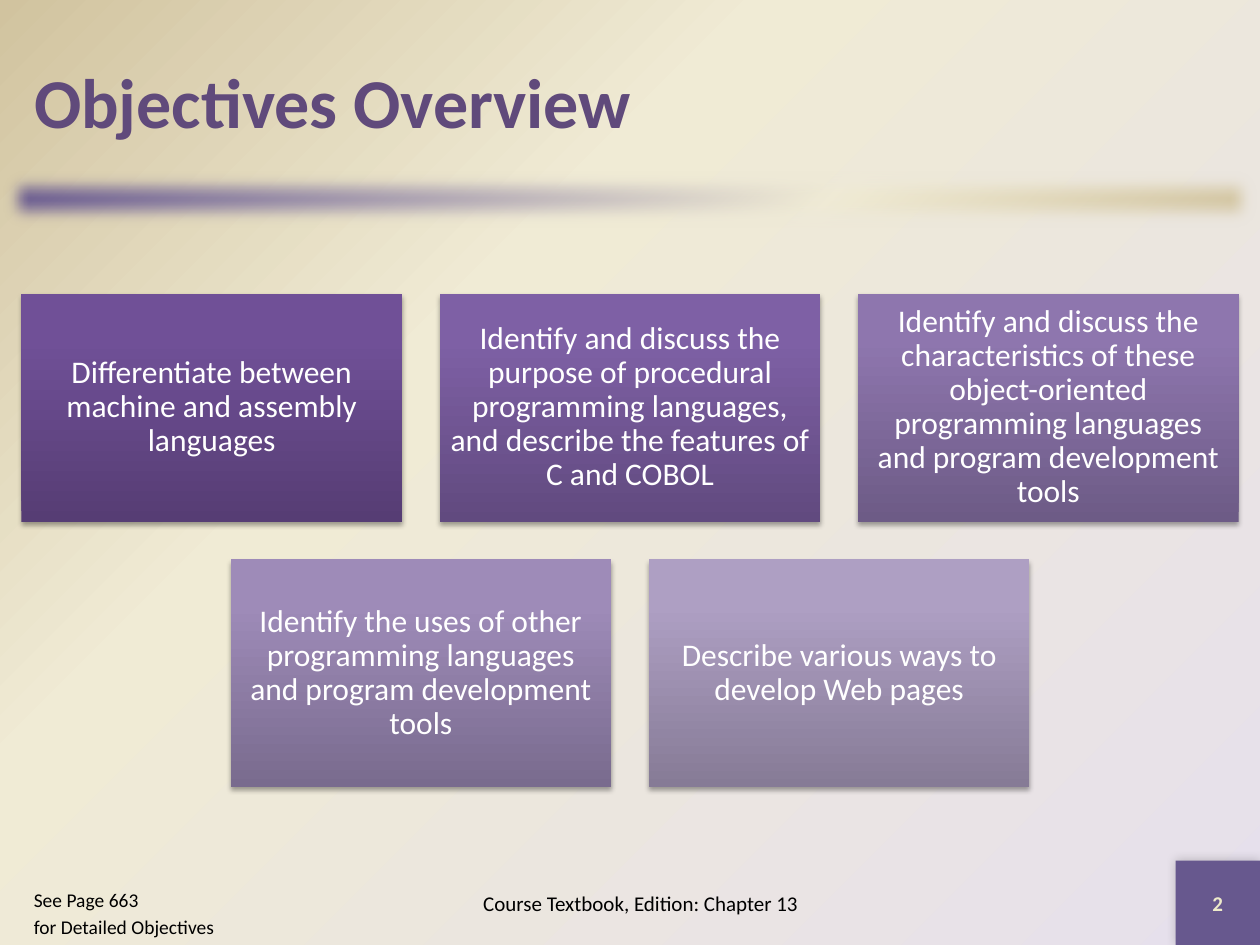
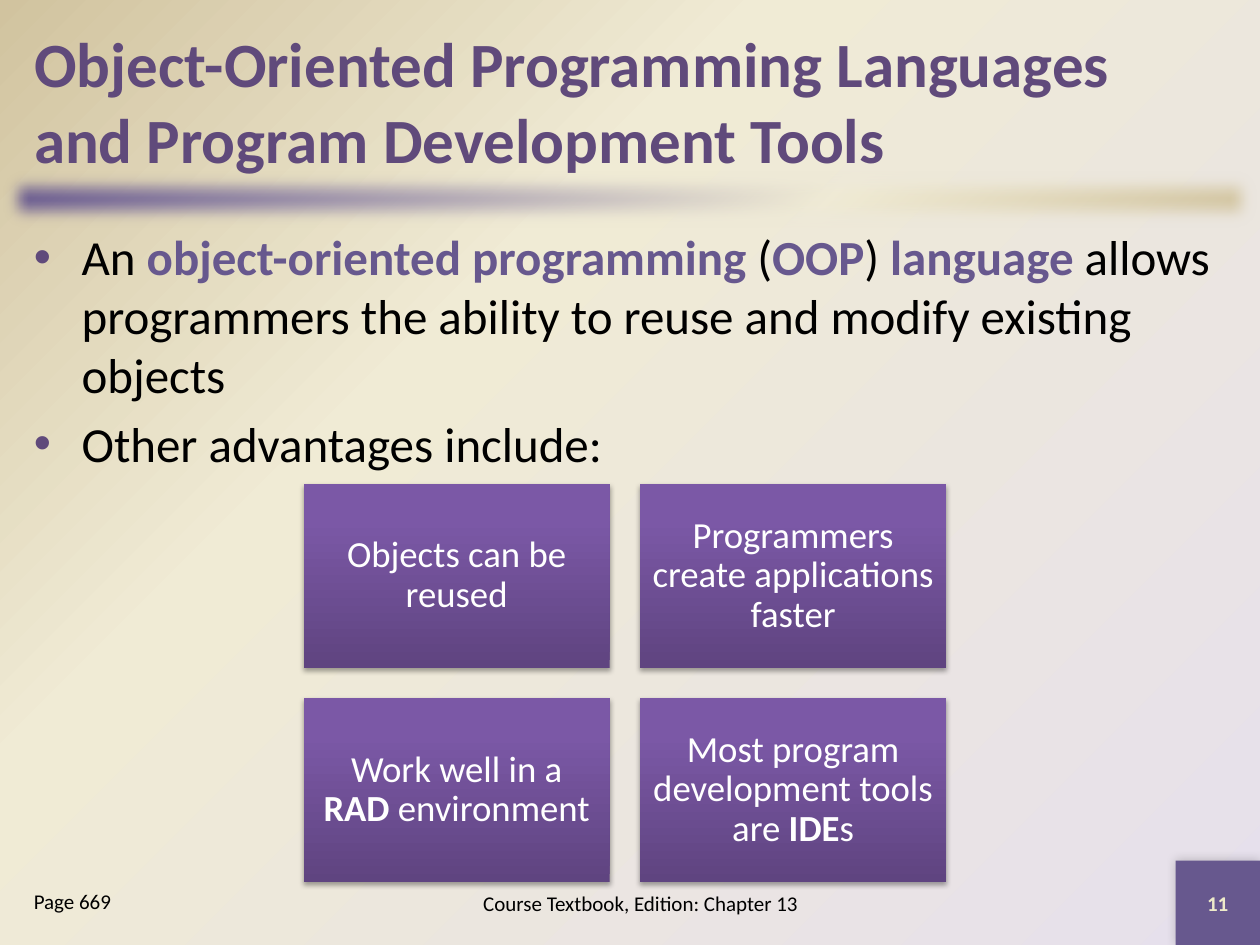
from dataclasses import dataclass

from pptx import Presentation
from pptx import util as u
from pptx.dml.color import RGBColor
from pptx.enum import shapes, text
from pptx.oxml import parse_xml
from pptx.oxml.ns import nsdecls, qn

FONT = "Calibri"
PLUM = RGBColor(0x60, 0x4A, 0x7B)
VIOLET = RGBColor(0x67, 0x58, 0x8E)
CREAM = RGBColor(0xF0, 0xEB, 0xD5)
TAN = RGBColor(0xD1, 0xC3, 0x9F)
LAVENDER = RGBColor(0xE6, 0xE0, 0xEC)
PALE_YELLOW = RGBColor(0xEE, 0xEB, 0xCA)
BLACK = RGBColor(0, 0, 0)
WHITE = RGBColor(0xFF, 0xFF, 0xFF)

LINEAR = '<a:lin ang="{}" scaled="0"/>'
FROM_BOTTOM_RIGHT = '<a:path path="circle"><a:fillToRect l="100000" t="100000"/></a:path>'
FOOTER = "Course Textbook, Edition: Chapter 13"
MARGIN = 0.17
CONTENT_WIDTH = 9.67


@dataclass(frozen=True)
class Span:
    text: str
    bold: bool = False
    color: RGBColor | None = None


@dataclass(frozen=True)
class Shade:
    """Tile gradient from the bottom edge to the top edge."""
    bottom: str
    middle: str
    top: str

    def stops(self) -> list[tuple[int, RGBColor]]:
        colors = map(RGBColor.from_string, (self.bottom, self.middle, self.top))
        return list(zip((0, 80, 100), colors))


@dataclass(frozen=True)
class Tile:
    spans: list[Span]
    shade: Shade


@dataclass(frozen=True)
class TileGrid:
    """Rows of equal tiles, each row centred on the same axis."""
    rows: list[list[Tile]]
    center: float
    top: float
    width: float
    height: float
    gap: float
    inset: float
    size: float


@dataclass(frozen=True)
class Page:
    title: list[str]
    title_size: float
    number: str
    reference: list[str]
    reference_size: float
    grid: TileGrid
    bullets: list[list[Span]]


SHADES = [
    Shade("563D74", "705097", "704F99"),
    Shade("614A7F", "7E60A5", "7F60A7"),
    Shade("6D5B86", "8E76AE", "8E75B0"),
    Shade("796B8E", "9E8BB8", "9E8BBA"),
    Shade("867B96", "AE9FC3", "AE9FC4"),
]
ADVANTAGE_SHADE = Shade("5F4480", "7B58A6", "7C57A8")

OBJECTIVES = [
    "Differentiate between machine and assembly languages",
    "Identify and discuss the purpose of procedural programming languages, "
    "and describe the features of C and COBOL",
    "Identify and discuss the characteristics of these object-oriented "
    "programming languages and program development tools",
    "Identify the uses of other programming languages and program development tools",
    "Describe various ways to develop Web pages",
]
objective_tiles = [Tile([Span(goal)], shade) for goal, shade in zip(OBJECTIVES, SHADES)]

ADVANTAGES = [
    [Span("Objects can be reused")],
    [Span("Programmers create applications faster")],
    [Span("Work well in a "), Span("RAD", True), Span(" environment")],
    [Span("Most program development tools are "), Span("IDE", True), Span("s")],
]
advantage_tiles = [Tile(spans, ADVANTAGE_SHADE) for spans in ADVANTAGES]

PAGES = [
    Page(
        ["Objectives Overview"], 40, "2",
        ["See Page 663", "for Detailed Objectives"], 11.1,
        TileGrid([objective_tiles[:3], objective_tiles[3:]],
                 5, 2.33, 3.02, 1.81, 0.3, 0.07, 18),
        [],
    ),
    Page(
        ["Object-Oriented Programming Languages ", "and Program Development Tools"], 36, "11",
        ["Page 669"], 12,
        TileGrid([advantage_tiles[:2], advantage_tiles[2:]],
                 4.96, 3.84, 2.43, 1.46, 0.24, 0.09, 21),
        [
            [
                Span("An "),
                Span("object-oriented programming ", True, VIOLET),
                Span("("),
                Span("OOP", True, VIOLET),
                Span(") "),
                Span("language ", True, VIOLET),
                Span("allows programmers the ability to reuse and modify existing objects"),
            ],
            [Span("Other advantages include:")],
        ],
    ),
]


def apply_gradient(fill, holder, stops: list[tuple[int, RGBColor]], direction: str) -> None:
    """Swap the solid fill inside holder for a gradient."""
    fill.solid()
    marks = "".join(
        f'<a:gs pos="{place * 1000}"><a:srgbClr val="{color}"/></a:gs>' for place, color in stops
    )
    gradient = parse_xml(
        f'<a:gradFill {nsdecls("a")} rotWithShape="1"><a:gsLst>{marks}</a:gsLst>'
        f"{direction}</a:gradFill>"
    )
    holder.replace(holder.find(qn("a:solidFill")), gradient)


def add_effect(shape, effect: str) -> None:
    shape.element.spPr.find(qn("a:effectLst")).append(parse_xml(effect))


def add_shadow(shape, alpha: int, blur: float, distance: float, angle: int) -> None:
    add_effect(shape, (
        f'<a:outerShdw {nsdecls("a")} blurRad="{u.Pt(blur)}" dist="{u.Pt(distance)}" '
        f'dir="{angle * 60000}" rotWithShape="0"><a:srgbClr val="000000">'
        f'<a:alpha val="{alpha * 1000}"/></a:srgbClr></a:outerShdw>'
    ))


def add_rectangle(slide, left: float, top: float, width: float, height: float):
    box = map(u.Inches, (left, top, width, height))
    rectangle = slide.shapes.add_shape(shapes.MSO_SHAPE.RECTANGLE, *box)
    rectangle.shadow.inherit = False
    rectangle.line.fill.background()
    return rectangle


def add_text_frame(slide, left: float, top: float, width: float, height: float):
    box = map(u.Inches, (left, top, width, height))
    frame = slide.shapes.add_textbox(*box).text_frame
    frame.word_wrap = True
    return frame


def add_spans(paragraph, spans: list[Span], size: float, color: RGBColor) -> None:
    for span in spans:
        run = paragraph.add_run()
        run.text = span.text
        run.font.name = FONT
        run.font.size = u.Pt(size)
        run.font.bold = span.bold
        run.font.color.rgb = span.color or color


def add_centered(frame, spans: list[Span], size: float, color: RGBColor) -> None:
    frame.vertical_anchor = text.MSO_ANCHOR.MIDDLE
    line = frame.paragraphs[0]
    line.alignment = text.PP_ALIGN.CENTER
    add_spans(line, spans, size, color)


def add_list(frame, items: list[list[Span]], size: float, bulleted: bool) -> None:
    for index, spans in enumerate(items):
        item = frame.add_paragraph() if index else frame.paragraphs[0]
        item.space_before = u.Pt(size * 0.2)
        properties = item._p.get_or_add_pPr()
        properties.set("marL", str(u.Inches(0.38)))
        properties.set("indent", str(u.Inches(-0.38)))
        if bulleted:
            for bullet in (
                f'<a:buClr {nsdecls("a")}><a:srgbClr val="{PLUM}"/></a:buClr>',
                f'<a:buFont {nsdecls("a")} typeface="Arial"/>',
                f'<a:buChar {nsdecls("a")} char="•"/>',
            ):
                properties.append(parse_xml(bullet))
        add_spans(item, spans, size, BLACK)


def format_title(slide, lines: list[str], size: float) -> None:
    title = slide.shapes.title
    title.left, title.top = u.Inches(MARGIN), u.Inches(MARGIN)
    title.width, title.height = u.Inches(CONTENT_WIDTH), u.Inches(1.25)
    frame = title.text_frame
    frame.auto_size = text.MSO_AUTO_SIZE.NONE
    frame.vertical_anchor = text.MSO_ANCHOR.MIDDLE
    heading = frame.paragraphs[0]
    heading.alignment = text.PP_ALIGN.LEFT
    for index, line in enumerate(lines):
        if index:
            heading.add_line_break()
        add_spans(heading, [Span(line, True)], size, PLUM)


def add_frame(slide, page: Page) -> None:
    """Draw the title band, footer, page number and page reference."""
    band = add_rectangle(slide, 0, 1.33, 10, 0.5)
    apply_gradient(band.fill, band.element.spPr, [(0, VIOLET), (65, CREAM), (100, TAN)],
                   LINEAR.format(45 * 60000))
    add_effect(band, f'<a:softEdge {nsdecls("a")} rad="{u.Pt(10)}"/>')

    corner = add_rectangle(slide, 9.33, 6.83, 0.67, 0.67)
    corner.fill.solid()
    corner.fill.fore_color.rgb = VIOLET
    add_shadow(corner, 20, 6, 0, 225)
    add_centered(corner.text_frame, [Span(page.number, True)], 12, PALE_YELLOW)

    add_centered(add_text_frame(slide, 3, 6.92, 4.17, 0.5), [Span(FOOTER)], 12, BLACK)
    reference = add_text_frame(slide, MARGIN, 7, 1.83, 0.5)
    add_list(reference, [[Span(line)] for line in page.reference], page.reference_size, False)


def add_tile(slide, tile: Tile, grid: TileGrid, left: float, top: float) -> None:
    card = add_rectangle(slide, left, top, grid.width, grid.height)
    apply_gradient(card.fill, card.element.spPr, tile.shade.stops(), LINEAR.format(270 * 60000))
    add_shadow(card, 35, 3.1, 1.8, 90)
    frame = card.text_frame
    frame.margin_left = frame.margin_right = u.Inches(grid.inset)
    frame.margin_top = frame.margin_bottom = u.Inches(grid.inset)
    add_centered(frame, tile.spans, grid.size, WHITE)
    frame.paragraphs[0].line_spacing = 0.9


def add_tiles(slide, grid: TileGrid) -> None:
    step = grid.width + grid.gap
    for row_index, row in enumerate(grid.rows):
        left = grid.center - (len(row) * step - grid.gap) / 2
        top = grid.top + row_index * (grid.height + grid.gap)
        for column, tile in enumerate(row):
            add_tile(slide, tile, grid, left + column * step, top)


def main() -> None:
    deck = Presentation()
    deck.slide_width, deck.slide_height = u.Inches(10), u.Inches(7.5)
    master = deck.slide_master
    backdrop = master.background.fill
    backdrop.solid()
    apply_gradient(backdrop, master.element.find(".//" + qn("p:bgPr")),
                   [(0, LAVENDER), (65, CREAM), (100, TAN)], FROM_BOTTOM_RIGHT)
    for page in PAGES:
        slide = deck.slides.add_slide(deck.slide_layouts[5])
        add_frame(slide, page)
        format_title(slide, page.title, page.title_size)
        if page.bullets:
            body = add_text_frame(slide, MARGIN, 1.75, CONTENT_WIDTH, 5.08)
            add_list(body, page.bullets, 28, True)
        add_tiles(slide, page.grid)
    deck.save("out.pptx")


if __name__ == "__main__":
    main()
